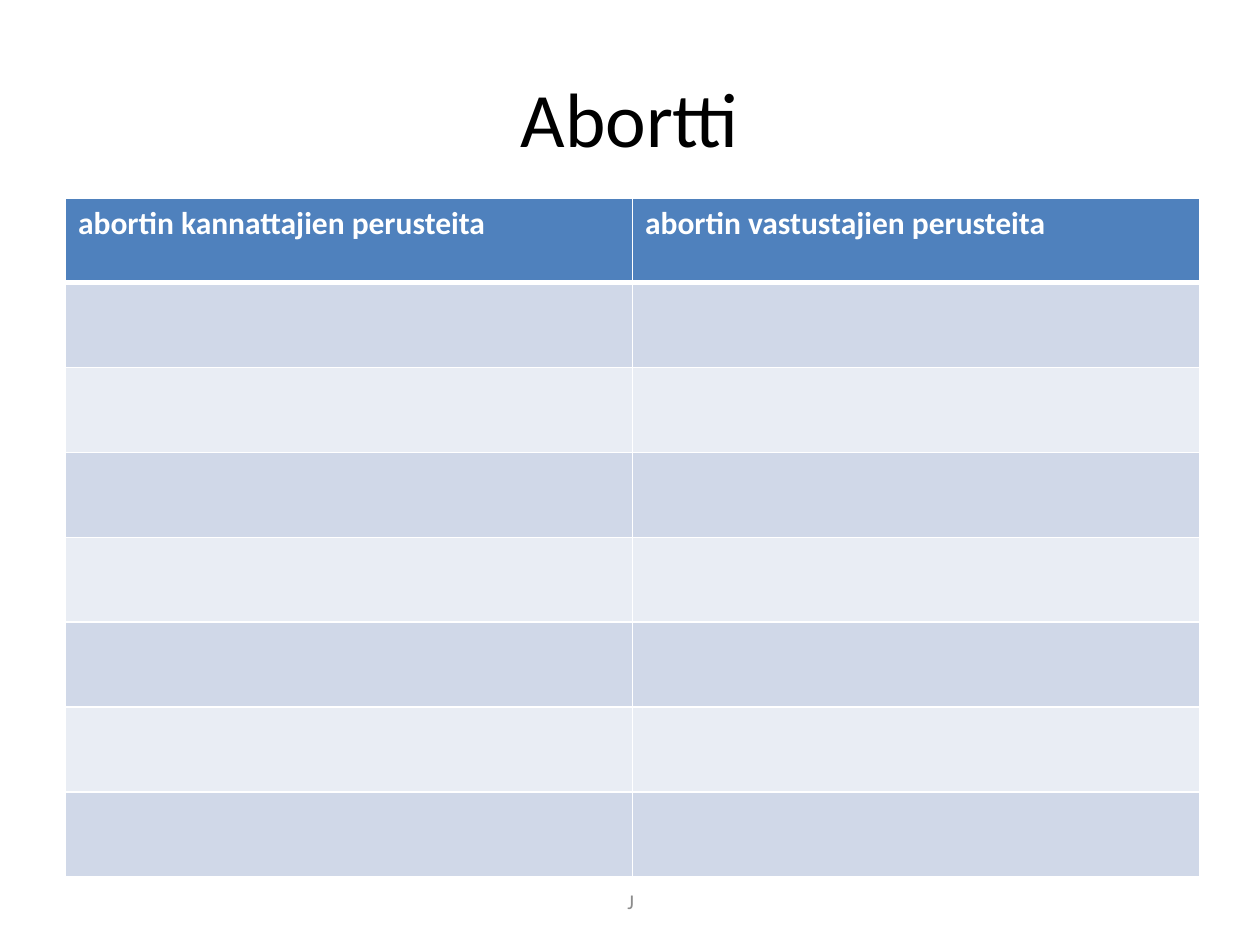
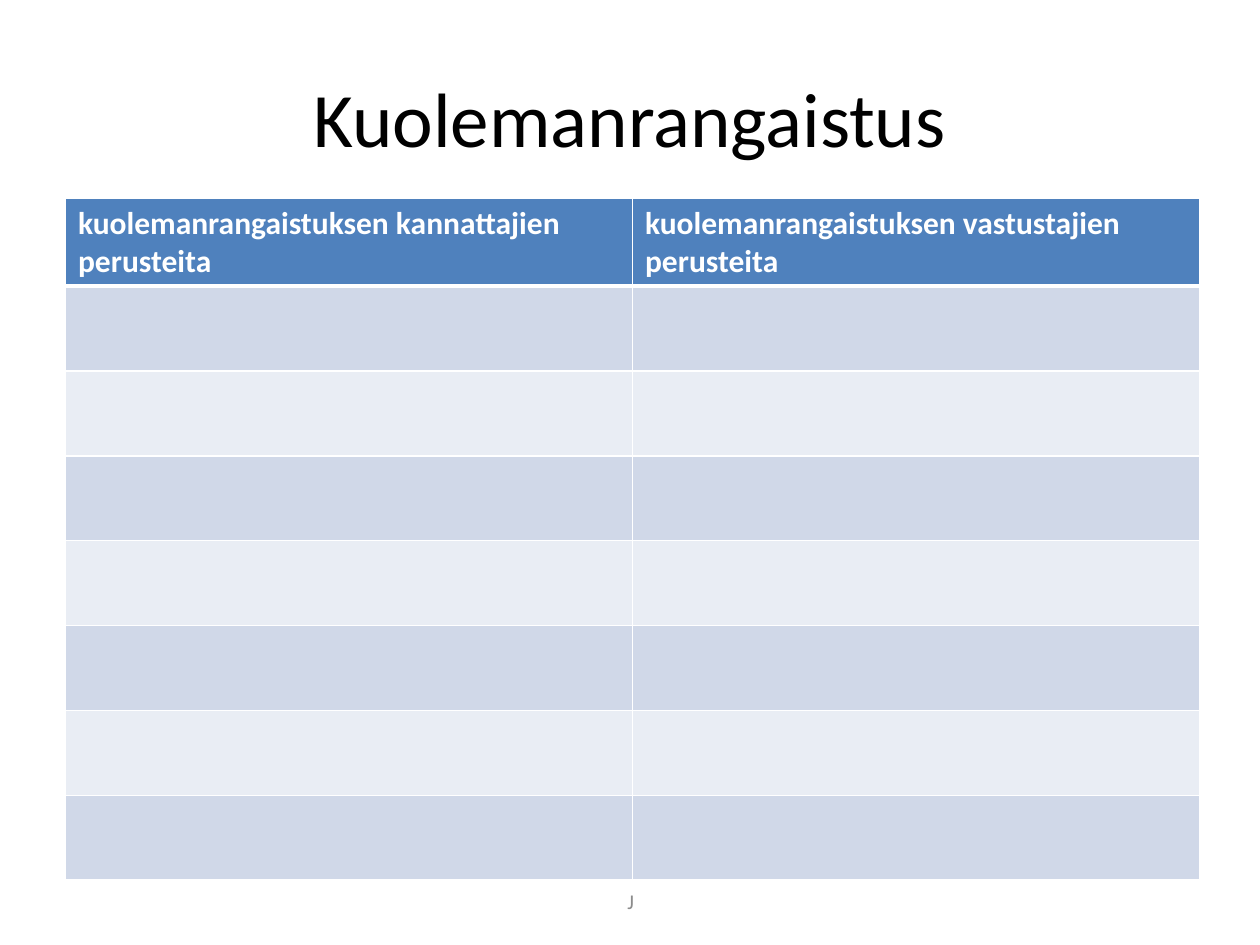
from dataclasses import dataclass

from lxml.etree import SubElement
from pptx import Presentation
from pptx.dml.color import RGBColor
from pptx.enum.text import MSO_ANCHOR, PP_ALIGN
from pptx.oxml.ns import qn
from pptx.util import Inches, Pt

COLORS = {
    "title": "000000",
    "header": "4F81BD",
    "odd_row": "D0D8E8",
    "even_row": "E9EDF4",
    "white": "FFFFFF",
    "footer": "8C8C8C",
}
FONT = "Calibri"
ROWS = 8
TABLE_HEIGHT = Inches(5.39)


@dataclass(frozen=True)
class Debate:
    title: str
    headings: tuple[str, str]


@dataclass(frozen=True)
class TextStyle:
    left: float
    top: float
    width: float
    height: float
    size: int
    color: str


TITLE = TextStyle(0.5, 0.3, 9, 1.25, 44, "title")
FOOTER = TextStyle(3.42, 6.95, 3.17, 0.4, 12, "footer")

DEBATES = [
    Debate("Abortti",
           ("abortin kannattajien perusteita",
            "abortin vastustajien perusteita")),
    Debate("Kuolemanrangaistus",
           ("kuolemanrangaistuksen kannattajien perusteita",
            "kuolemanrangaistuksen vastustajien perusteita")),
]


def rgb(name: str) -> RGBColor:
    return RGBColor.from_string(COLORS[name])


def set_font(para, size: int, color: str, bold: bool = False) -> None:
    font = para.font
    font.name, font.size, font.bold = FONT, Pt(size), bold
    font.color.rgb = rgb(color)


def add_centred_text(page, text: str, style: TextStyle) -> None:
    box = page.shapes.add_textbox(Inches(style.left), Inches(style.top),
                                  Inches(style.width), Inches(style.height))
    frame = box.text_frame
    frame.word_wrap = True
    frame.vertical_anchor = MSO_ANCHOR.MIDDLE
    para = frame.paragraphs[0]
    para.text = text
    para.alignment = PP_ALIGN.CENTER
    set_font(para, style.size, style.color)


def set_borders(cell, top: int, bottom: int) -> None:
    """Draw white cell borders; widths are in points."""
    properties = cell._tc.get_or_add_tcPr()
    widths = {"lnL": 1, "lnR": 1, "lnT": top, "lnB": bottom}
    for side, width in widths.items():
        line = SubElement(properties, qn(f"a:{side}"), w=str(Pt(width)))
        fill = SubElement(line, qn("a:solidFill"))
        SubElement(fill, qn("a:srgbClr"), val=COLORS["white"])


def add_argument_table(page, headings: tuple[str, str]) -> None:
    table = page.shapes.add_table(ROWS, len(headings), Inches(0.52), Inches(1.57),
                                  Inches(9), TABLE_HEIGHT).table
    for index, row in enumerate(table.rows):
        row.height = TABLE_HEIGHT // ROWS
        fill = "header" if index == 0 else "odd_row" if index % 2 else "even_row"
        for cell in row.cells:
            # Borders come before the fill in the cell properties
            set_borders(cell, top=3 if index == 1 else 1,
                        bottom=3 if index == 0 else 1)
            cell.fill.solid()
            cell.fill.fore_color.rgb = rgb(fill)
    for cell, heading in zip(table.rows[0].cells, headings):
        cell.text = heading
        set_font(cell.text_frame.paragraphs[0], 18, "white", bold=True)


def add_debate_page(deck, debate: Debate) -> None:
    page = deck.slides.add_slide(deck.slide_layouts[6])
    add_centred_text(page, debate.title, TITLE)
    add_argument_table(page, debate.headings)
    add_centred_text(page, "J", FOOTER)


def main() -> None:
    deck = Presentation()
    deck.slide_width, deck.slide_height = Inches(10), Inches(7.5)
    for debate in DEBATES:
        add_debate_page(deck, debate)
    deck.save("out.pptx")


if __name__ == "__main__":
    main()
